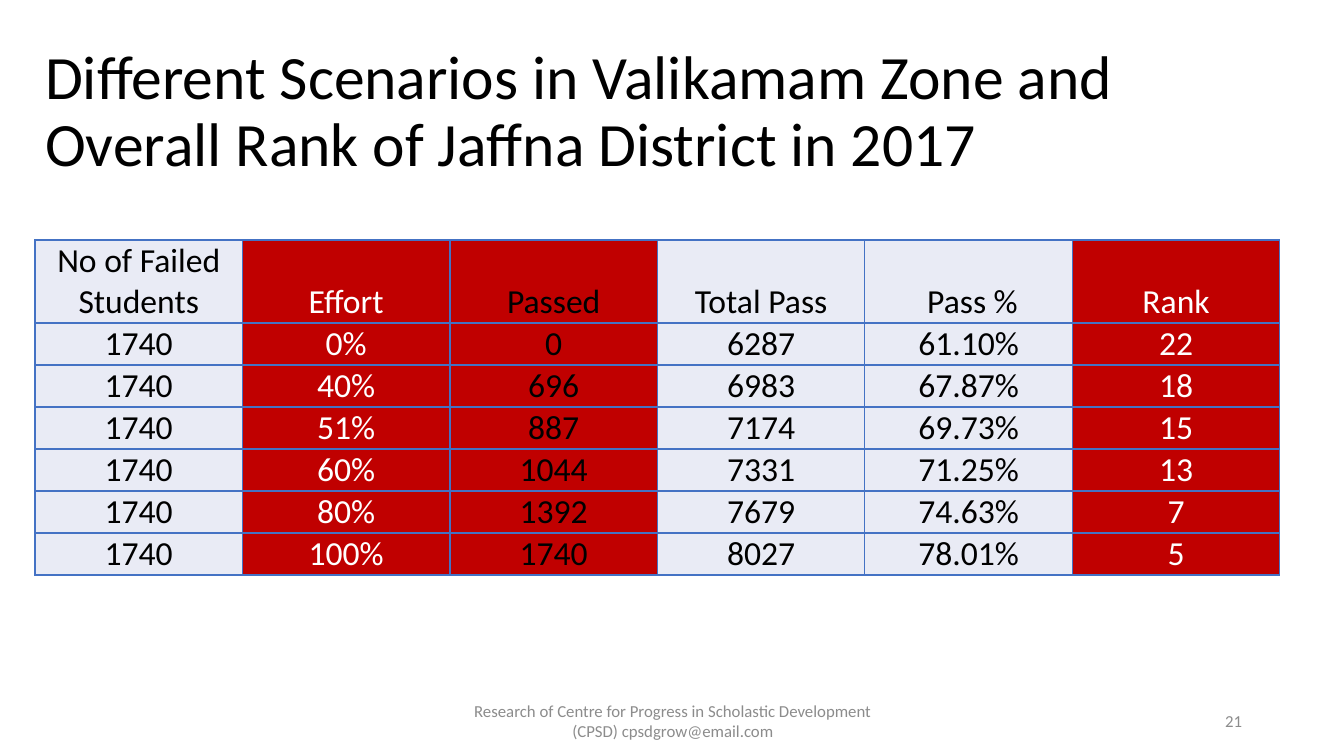
from lxml.etree import SubElement
from pptx import Presentation
from pptx.dml.color import RGBColor
from pptx.enum.text import MSO_ANCHOR, PP_ALIGN
from pptx.oxml.ns import qn
from pptx.util import Pt

# Content
TITLE = ("Different Scenarios in Valikamam Zone and "
         "Overall Rank of Jaffna District in 2017")
FOOTER = ("Research of Centre for Progress in Scholastic Development "
          "(CPSD) cpsdgrow@email.com")
NUMBER = "21"
HEADS = ["No of Failed Students", "Effort", "Passed",
         "Total Pass", " Pass %", "Rank"]
FAILED = "1740"
CASES = [
    ("0%", "0", "6287", "61.10%", "22"),
    ("40%", "696", "6983", "67.87%", "18"),
    ("51%", "887", "7174", "69.73%", "15"),
    ("60%", "1044", "7331", "71.25%", "13"),
    ("80%", "1392", "7679", "74.63%", "7"),
    ("100%", "1740", "8027", "78.01%", "5"),
]
COLORS = {"black": "000000", "white": "FFFFFF", "gray": "8C8C8C",
          "red": "C00000", "pale": "E9EBF5", "blue": "4472C4"}
# Fill and text colour of each column
STYLES = [("pale", "black"), ("red", "white"), ("red", "black"),
          ("pale", "black"), ("pale", "black"), ("red", "white")]
FONT = "Calibri"
SCALE = 914400 / 100.8  # EMU per px
HEAD_H, ROW_H = 83, 42


def px(n):
    return round(n * SCALE)


def rgb(name):
    return RGBColor.from_string(COLORS[name])


def write(frame, text, size, color, align):
    frame.text = text
    para = frame.paragraphs[0]
    para.alignment = align
    font = para.runs[0].font
    font.name, font.size = FONT, Pt(size)
    font.color.rgb = rgb(color)
    return para


def border(cell):
    props = cell._tc.get_or_add_tcPr()
    for side in ("lnL", "lnR", "lnT", "lnB"):
        line = SubElement(props, qn("a:" + side), w=str(Pt(1)))
        fill = SubElement(line, qn("a:solidFill"))
        SubElement(fill, qn("a:srgbClr"), val=COLORS["blue"])


deck = Presentation()
deck.slide_width, deck.slide_height = px(1344), px(756)
slide = deck.slides.add_slide(deck.slide_layouts[5])

# Title
title = slide.shapes.title
title.left, title.top, title.width, title.height = map(px, (35, 40, 1271, 146))
title.text_frame.vertical_anchor = MSO_ANCHOR.MIDDLE
para = write(title.text_frame, TITLE, 44, "black", PP_ALIGN.LEFT)
para.line_spacing = 0.9

# Footer and slide number
for text, left, width, align in [(FOOTER, 446, 454, PP_ALIGN.CENTER),
                                 (NUMBER, 950, 302, PP_ALIGN.RIGHT)]:
    box = slide.shapes.add_textbox(px(left), px(701), px(width), px(40))
    box.text_frame.word_wrap = True
    box.text_frame.vertical_anchor = MSO_ANCHOR.MIDDLE
    write(box.text_frame, text, 12, "gray", align)

# Table
rows = [HEADS] + [(FAILED, *case) for case in CASES]
frame = slide.shapes.add_table(len(rows), len(HEADS), px(35), px(240),
                               px(1245), px(HEAD_H + ROW_H * len(CASES)))
table = frame.table
for r, row in enumerate(rows):
    table.rows[r].height = px(ROW_H if r else HEAD_H)
    for c, (text, (fill, color)) in enumerate(zip(row, STYLES)):
        cell = table.cell(r, c)
        cell.margin_left = cell.margin_right = cell.margin_top = px(1)
        cell.margin_bottom = 0
        cell.vertical_anchor = MSO_ANCHOR.BOTTOM
        border(cell)
        cell.fill.solid()
        cell.fill.fore_color.rgb = rgb(fill)
        write(cell.text_frame, text, 24, color, PP_ALIGN.CENTER)

deck.save("out.pptx")
